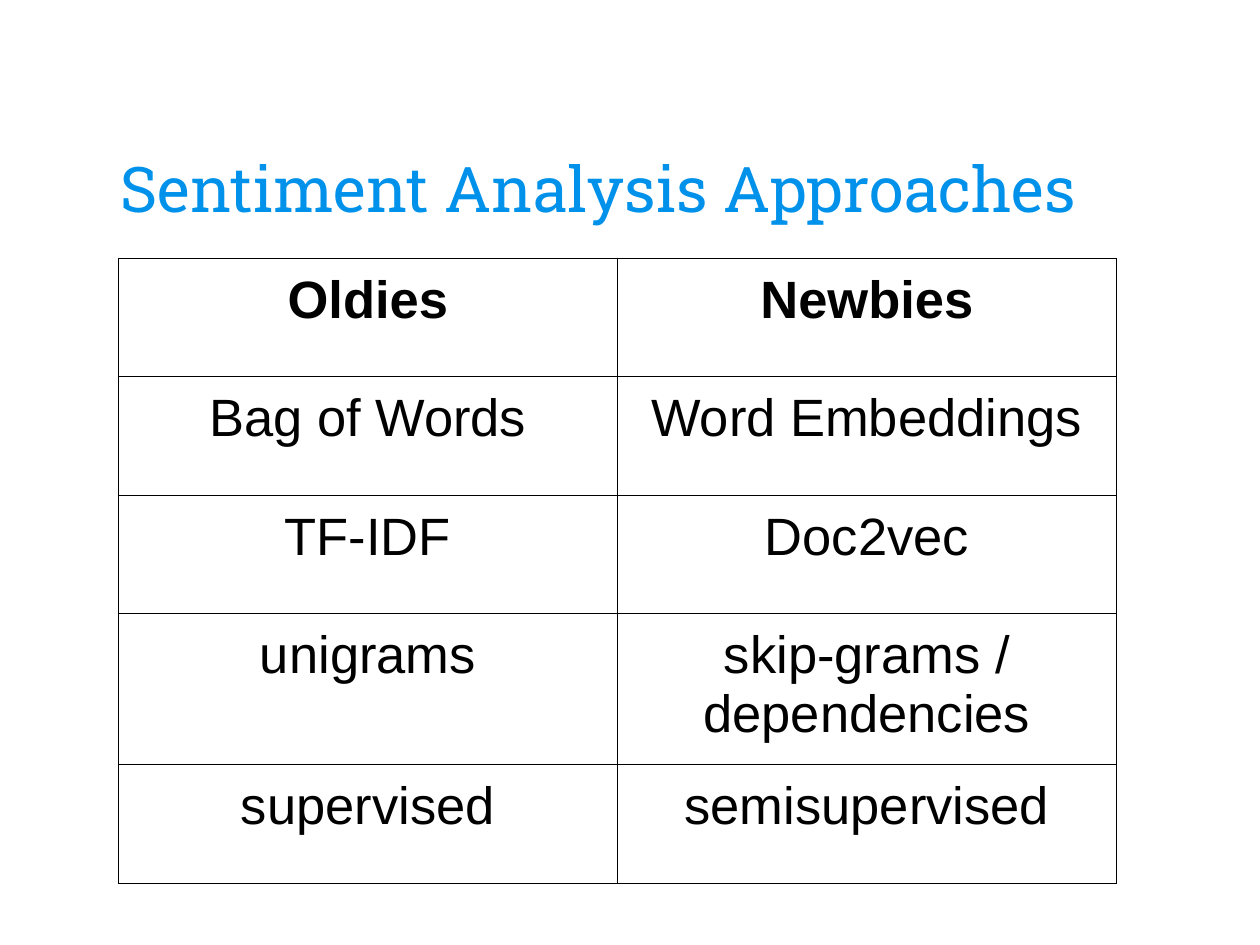
from lxml import etree
from pptx import Presentation
from pptx.dml.color import RGBColor
from pptx.enum.text import MSO_ANCHOR as Anchor, PP_ALIGN as Align
from pptx.oxml.ns import qn
from pptx.util import Inches, Pt

# Content
TITLE = "Sentiment Analysis Approaches"
APPROACHES = [
    ("Oldies", "Newbies"),
    ("Bag of Words", "Word Embeddings"),
    ("TF-IDF", "Doc2vec"),
    ("unigrams", "skip-grams / dependencies"),
    ("supervised", "semisupervised"),
]

# Format
BLUE = RGBColor(0x00, 0x91, 0xEA)
BLACK = RGBColor(0x00, 0x00, 0x00)
MARGIN = Inches(0.1)
COLUMN_WIDTH, ROW_HEIGHT = Inches(3.96), Inches(0.94)
BORDER_WIDTH = Pt(0.75)


def write_text(frame, text, font="Arial", size=30, color=BLACK, bold=False, align=Align.CENTER):
    paragraph = frame.paragraphs[0]
    paragraph.alignment = align
    run = paragraph.add_run()
    run.text = text
    run.font.name = font
    run.font.size = Pt(size)
    run.font.bold = bold
    run.font.color.rgb = color


def set_margins(target):
    target.margin_left = target.margin_right = MARGIN
    target.margin_top = target.margin_bottom = MARGIN


def add_borders(cell):
    properties = cell._tc.get_or_add_tcPr()
    for position, side in enumerate(("lnL", "lnR", "lnT", "lnB")):
        line = etree.Element(qn(f"a:{side}"), w=str(BORDER_WIDTH))
        fill = etree.SubElement(line, qn("a:solidFill"))
        etree.SubElement(fill, qn("a:srgbClr"), val=str(BLACK))
        properties.insert(position, line)


presentation = Presentation()
presentation.slide_width, presentation.slide_height = Inches(10), Inches(7.5)
slide = presentation.slides.add_slide(presentation.slide_layouts[6])

# Title
title = slide.shapes.add_textbox(Inches(0.86), Inches(0.45), Inches(8.28), Inches(1.44))
title_frame = title.text_frame
title_frame.word_wrap = True
title_frame.vertical_anchor = Anchor.BOTTOM
set_margins(title_frame)
write_text(title_frame, TITLE, font="Roboto Slab", size=36, color=BLUE, align=Align.LEFT)

# Comparison table
row_count, column_count = len(APPROACHES), len(APPROACHES[0])
table = slide.shapes.add_table(
    row_count, column_count, Inches(0.94), Inches(2.05),
    COLUMN_WIDTH * column_count, ROW_HEIGHT * row_count,
).table
table.horz_banding = False
for row_index, row in enumerate(APPROACHES):
    for column_index, text in enumerate(row):
        cell = table.cell(row_index, column_index)
        cell.fill.background()
        set_margins(cell)
        add_borders(cell)
        write_text(cell.text_frame, text, bold=row_index == 0)

presentation.save("out.pptx")
